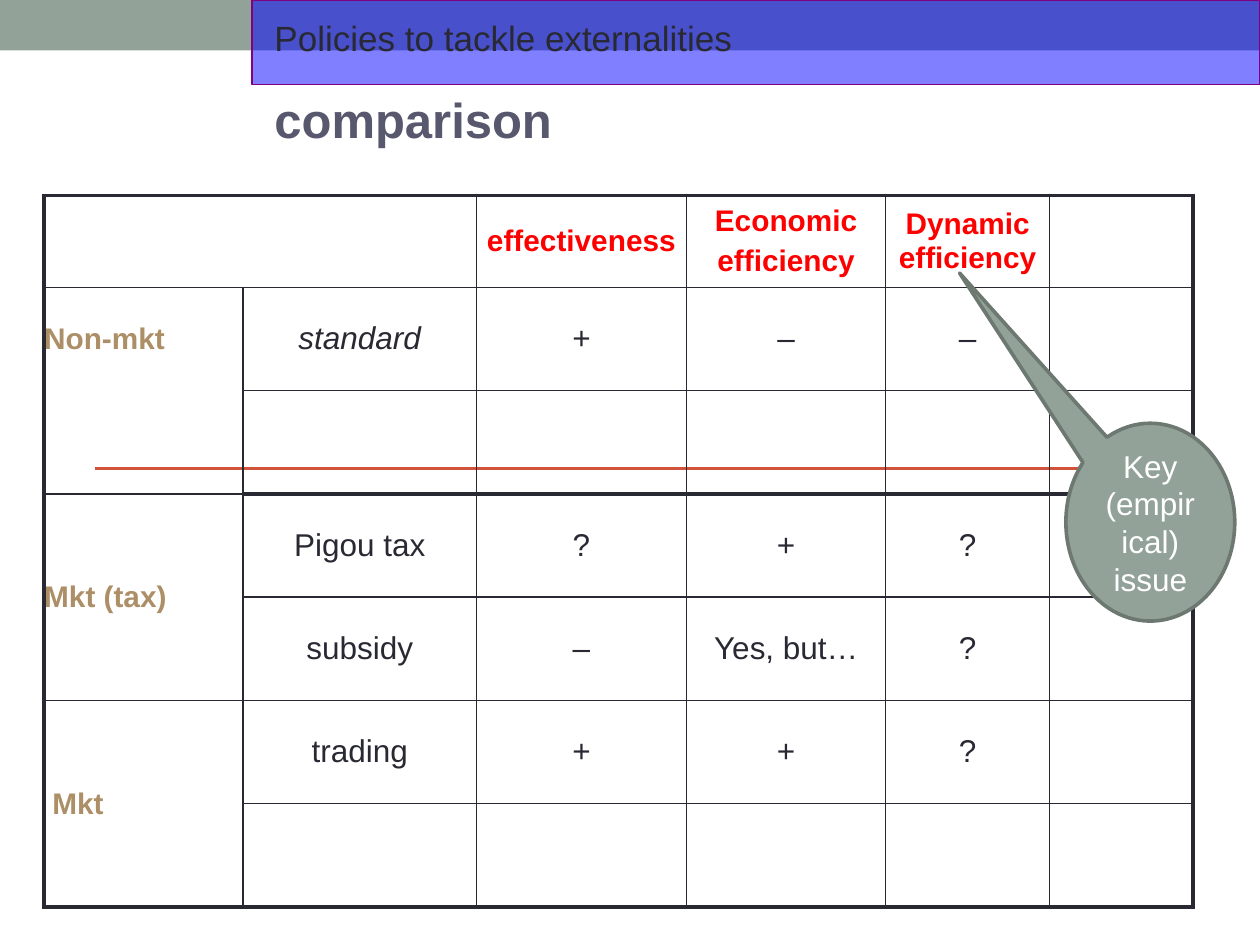
from lxml.etree import SubElement
from pptx import Presentation
from pptx.dml.color import RGBColor
from pptx.enum.shapes import MSO_CONNECTOR, MSO_SHAPE
from pptx.enum.text import MSO_ANCHOR, PP_ALIGN
from pptx.oxml.ns import qn
from pptx.util import Inches, Pt

INK, SAGE, TAN, RED = "292934", "93A299", "AD8F67", "FF0000"
rgb = RGBColor.from_string


def write(tf, text, size, color, bold=False, italic=False,
          align=PP_ALIGN.LEFT, before=0, spacing=None):
    """Fill a text frame, one paragraph per line of text."""
    tf.word_wrap = True
    for i, line in enumerate(text.split("\n")):
        p = tf.add_paragraph() if i else tf.paragraphs[0]
        p.alignment = align
        p.space_before = Pt(before)
        p.line_spacing = spacing
        r = p.add_run()
        r.text = line
        r.font.name = "Arial"
        r.font.size = Pt(size)
        r.font.bold = bold
        r.font.italic = italic
        r.font.color.rgb = rgb(color)


def border(cell, side, width):
    """Draw one side (L, R, T or B) of a cell; width 0 means no line."""
    ln = SubElement(cell._tc.get_or_add_tcPr(), qn(f"a:ln{side}"), w=str(Pt(width)))
    if width:
        fill = SubElement(ln, qn("a:solidFill"))
        SubElement(fill, qn("a:srgbClr"), val=INK)
    else:
        SubElement(ln, qn("a:noFill"))


prs = Presentation()
prs.slide_width, prs.slide_height = Inches(10), Inches(7.5)
s = prs.slides.add_slide(prs.slide_layouts[6])

# Top bar and rule behind the table
bar = s.shapes.add_shape(MSO_SHAPE.RECTANGLE, 0, 0, Inches(10), Inches(0.4))
bar.shadow.inherit = False
bar.fill.solid()
bar.fill.fore_color.rgb = rgb(SAGE)
bar.line.fill.background()

rule = s.shapes.add_connector(MSO_CONNECTOR.STRAIGHT, Inches(0.75), Inches(3.72),
                              Inches(9.33), Inches(3.72))
rule.line.color.rgb = rgb("D2533C")
rule.line.width = Pt(1.5)
SubElement(rule._element.spPr, qn("a:effectLst"))

subtitle = s.shapes.add_textbox(Inches(2.08), Inches(0.75), Inches(7.92), Inches(0.5))
write(subtitle.text_frame, "comparison", 28, "57576E", bold=True, spacing=0.8)

# Comparison table
rows = [
    ["", "", "effectiveness", "Economic\nefficiency", "Dynamic efficiency", ""],
    ["Non-mkt", "standard", "+", "–", "–", ""],
    ["", "", "", "", "", ""],
    ["Mkt (tax)", "Pigou tax", "?", "+", "?", ""],
    ["", "subsidy", "–", "Yes, but…", "?", ""],
    [" Mkt", "trading", "+", "+", "?", ""],
    ["", "", "", "", "", ""],
]
col_widths = [1.58, 1.85, 1.67, 1.58, 1.3, 1.14]
row_heights = [0.73] + [0.82] * 6
n_rows, n_cols = len(row_heights), len(col_widths)
frame = s.shapes.add_table(n_rows, n_cols, Inches(0.35), Inches(1.55),
                           Inches(sum(col_widths)), Inches(sum(row_heights)))
table = frame.table
table.first_row = table.horz_banding = False
for column, width in zip(table.columns, col_widths):
    column.width = Inches(width)
for row, height in zip(table.rows, row_heights):
    row.height = Inches(height)
table.cell(0, 0).merge(table.cell(0, 1))
for top in (3, 5):
    table.cell(top, 0).merge(table.cell(top + 1, 0))

# Line widths by grid position: thick frame, thick line above the market policies
across = [[1] * n_cols for _ in range(n_rows + 1)]
across[0] = across[-1] = [2.25] * n_cols
across[3] = [1] + [2.25] * (n_cols - 1)
for i in (2, 4, 6):
    across[i][0] = 0
down = [[2.25] + [1] * (n_cols - 1) + [2.25] for _ in range(n_rows)]
down[0][1] = 0

for i, texts in enumerate(rows):
    for j, text in enumerate(texts):
        cell = table.cell(i, j)
        border(cell, "L", down[i][j])
        border(cell, "R", down[i][j + cell.span_width])
        border(cell, "T", across[i][j])
        border(cell, "B", across[i + cell.span_height][j])
        cell.fill.background()
        cell.vertical_anchor = MSO_ANCHOR.MIDDLE
        cell.margin_left = cell.margin_right = 0
        cell.margin_top = cell.margin_bottom = Inches(0.05)
        if not text:
            continue
        heading = i == 0 or j == 0
        write(cell.text_frame, text, 17 if heading else 18,
              RED if i == 0 else TAN if j == 0 else INK,
              bold=heading, italic=text == "standard",
              align=PP_ALIGN.CENTER if j else PP_ALIGN.LEFT, before=3.5)

# Title banner
banner = s.shapes.add_group_shape()
sp = banner.shapes.add_shape(MSO_SHAPE.RECTANGLE, Inches(2), 0, Inches(8), Inches(0.67))
sp.shadow.inherit = False
sp.fill.solid()
sp.fill.fore_color.rgb = rgb("0000FF")
SubElement(sp._element.spPr.find(f".//{qn('a:srgbClr')}"), qn("a:alpha"), val="50000")
sp.line.color.rgb = rgb("800080")
sp.line.width = Pt(0.75)
title = banner.shapes.add_textbox(Inches(2.08), Inches(0.08), Inches(7.38), Inches(0.43))
write(title.text_frame, "Policies to tackle externalities", 20, INK)

# Callout pointing at dynamic efficiency
callout = s.shapes.add_shape(MSO_SHAPE.OVAL_CALLOUT, Inches(8.46), Inches(3.36),
                             Inches(1.34), Inches(1.57))
callout.adjustments[0], callout.adjustments[1] = -1.13, -1.26
callout.shadow.inherit = False
callout.fill.solid()
callout.fill.fore_color.rgb = rgb(SAGE)
callout.line.color.rgb = rgb("6D7871")
callout.line.width = Pt(2.08)
callout.text_frame.vertical_anchor = MSO_ANCHOR.MIDDLE
write(callout.text_frame, "Key (empirical) issue", 18, "FFFFFF", align=PP_ALIGN.CENTER)

prs.save("out.pptx")
